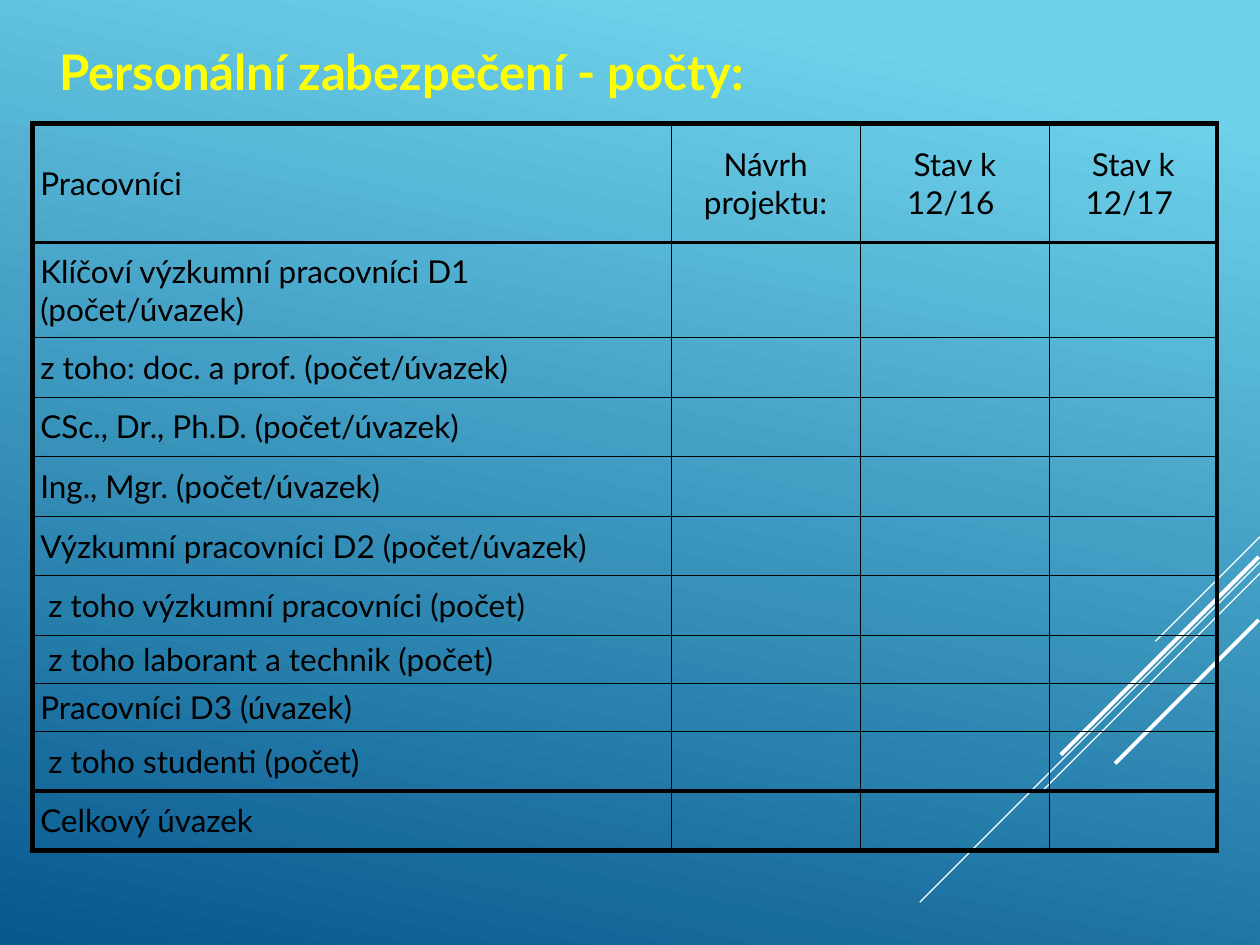
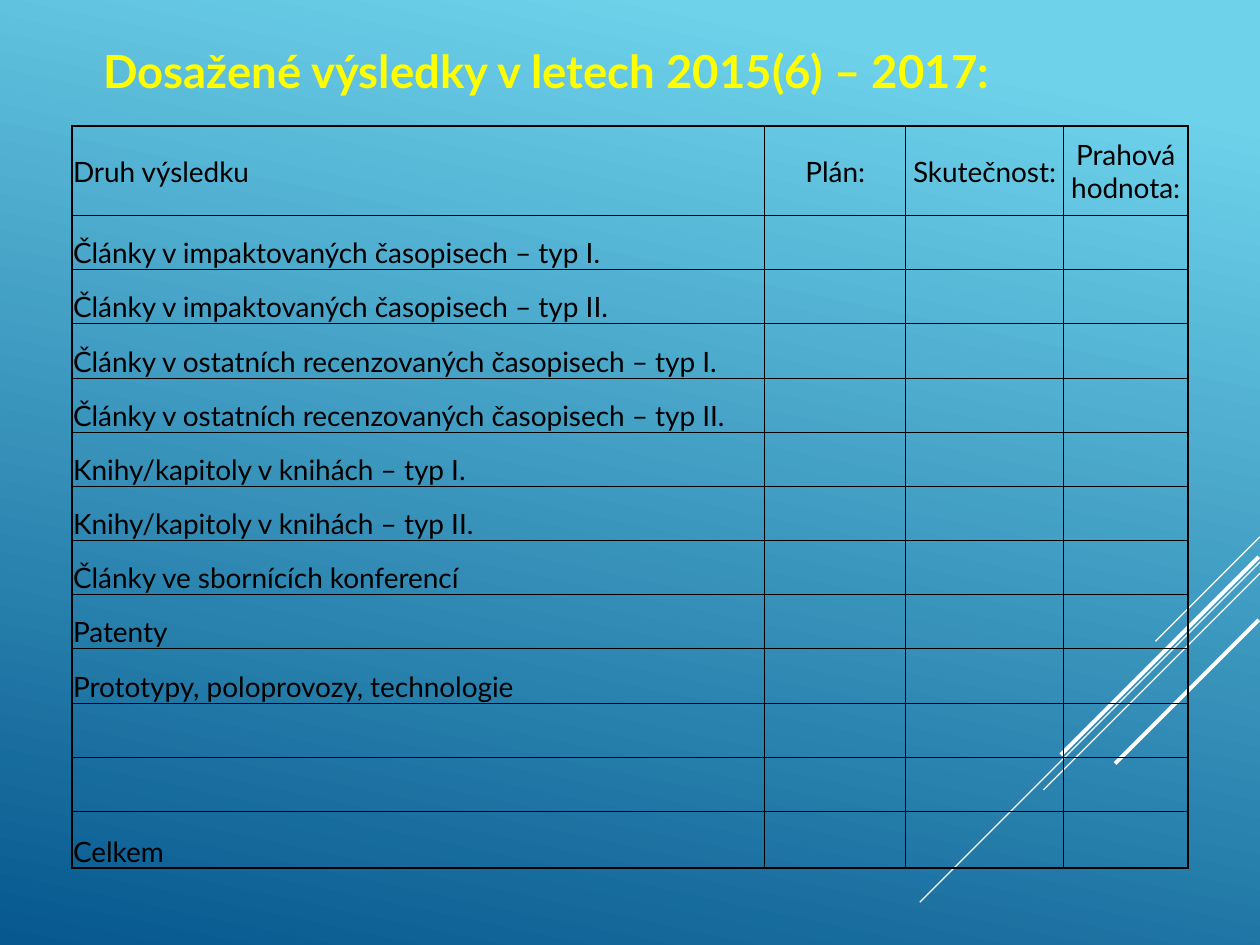
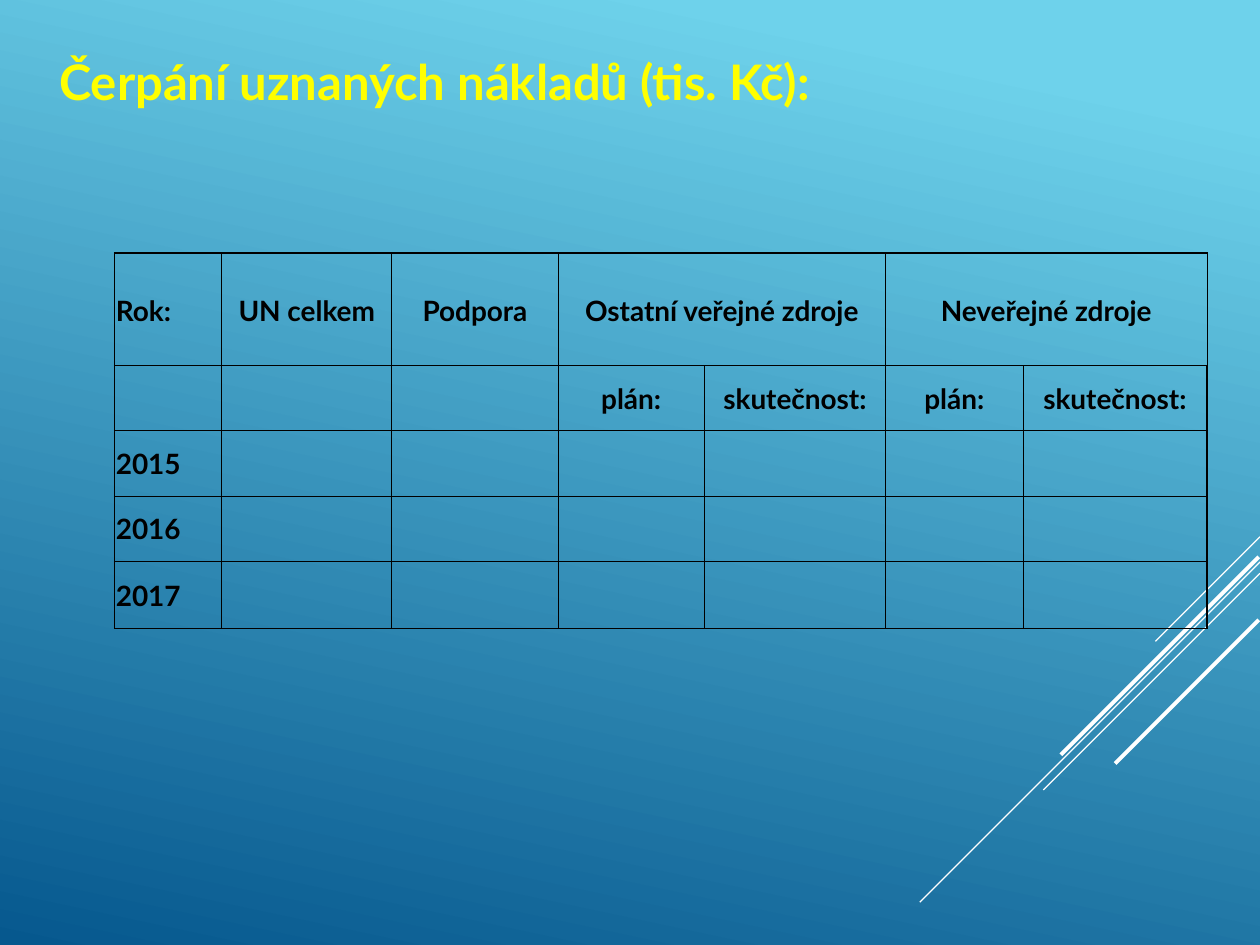
from lxml import etree
from pptx import Presentation
from pptx import util as u
from pptx.dml.color import RGBColor
from pptx.enum import shapes, text
from pptx.oxml import ns

FONT = "Lato"
YELLOW = RGBColor(0xFF, 0xFF, 0x00)
BLACK = RGBColor(0x00, 0x00, 0x00)
WHITE = RGBColor(0xFF, 0xFF, 0xFF)
SKY = RGBColor(0x6E, 0xD2, 0xEB)
DEEP_BLUE = RGBColor(0x06, 0x58, 0x8E)

GRID_COLUMNS, GRID_ROWS = 100, 75
THIN = 0.5

# start column, start row, length on both axes, width in points
STRIPES = [
    (100, 42.6, 8.3, 0.75),
    (100, 44.6, 27, 0.75),
    (100, 45.5, 17.2, 0.75),
    (99.9, 44.2, 15.7, 2.25),
    (99.9, 49.2, 11.4, 2.25),
]


def grid(*steps):
    """Turn grid steps into lengths; a step is the same across and down."""
    return [u.Inches(step / 10) for step in steps]


def write(frame, content, size, color=BLACK, bold=False,
          align=text.PP_ALIGN.LEFT):
    paragraph = frame.paragraphs[0]
    paragraph.alignment = align
    run = paragraph.add_run()
    run.text = content
    run.font.name = FONT
    run.font.size = u.Pt(size)
    run.font.bold = bold
    run.font.color.rgb = color
    return paragraph


def paint_background(master):
    fill = master.background.fill
    fill.gradient()
    fill.gradient_angle = 360 - 102
    for stop, position, color in zip(fill.gradient_stops, (0.1, 1), (SKY, DEEP_BLUE)):
        stop.position = position
        stop.color.rgb = color


def add_stripes(slide):
    for column, row, length, width in STRIPES:
        ends = grid(column, row, column - length, row + length)
        stripe = slide.shapes.add_connector(shapes.MSO_CONNECTOR.STRAIGHT, *ends)
        stripe.line.color.rgb = WHITE
        stripe.line.width = u.Pt(width)
        etree.SubElement(stripe._element.spPr, ns.qn("a:effectLst"))


def add_title(slide, content, box, size):
    frame = slide.shapes.add_textbox(*grid(*box)).text_frame
    frame.word_wrap = True
    frame.auto_size = text.MSO_AUTO_SIZE.SHAPE_TO_FIT_TEXT
    paragraph = write(frame, content, size, color=YELLOW, bold=True)
    paragraph.line_spacing = 1.1
    paragraph.space_before = paragraph.space_after = u.Pt(3)


def set_borders(cell, left, right, top, bottom):
    """Draw the four sides of a cell, with widths in points."""
    properties = cell._tc.get_or_add_tcPr()
    sides = zip(("lnL", "lnR", "lnT", "lnB"), (left, right, top, bottom))
    for index, (tag, width) in enumerate(sides):
        line = etree.Element(ns.qn(f"a:{tag}"), w=str(u.Pt(width)))
        fill = etree.SubElement(line, ns.qn("a:solidFill"))
        etree.SubElement(fill, ns.qn("a:srgbClr"), val=str(BLACK))
        properties.insert(index, line)


def share(parts, total, weights):
    for part, weight in zip(parts, weights):
        yield part, round(total * weight / sum(weights))


def add_grid_table(slide, box, columns, rows, lines, size, bold=False,
                   body_anchor=text.MSO_ANCHOR.MIDDLE, margins=(0.01, 0.01, 0.01, 0),
                   outer=1, rules=None, spans=()):
    """Columns and rows are weights; rules maps a row to the width of its top line."""
    left, top, width, height = grid(*box)
    table = slide.shapes.add_table(len(rows), len(columns), left, top, width, height).table
    table.first_row = table.horz_banding = False
    for column, length in share(table.columns, width, columns):
        column.width = length
    for row, length in share(table.rows, height, rows):
        row.height = length

    across = [outer] + [THIN] * (len(columns) - 1) + [outer]
    down = [outer] + [THIN] * (len(rows) - 1) + [outer]
    for row, rule in (rules or {}).items():
        down[row] = rule

    for row in range(len(rows)):
        for column in range(len(columns)):
            cell = table.cell(row, column)
            cell.fill.background()
            set_borders(cell, across[column], across[column + 1], down[row], down[row + 1])
            (cell.margin_left, cell.margin_top,
             cell.margin_right, cell.margin_bottom) = map(u.Inches, margins)
            cell.vertical_anchor = body_anchor if row else text.MSO_ANCHOR.MIDDLE
            content = lines[row][column] if column < len(lines[row]) else ""
            if content:
                align = text.PP_ALIGN.CENTER if column else text.PP_ALIGN.LEFT
                write(cell.text_frame, content, size, bold=bold, align=align)
    for row, first, last in spans:
        table.cell(row, first).merge(table.cell(row, last))


def build_staff(slide):
    add_title(slide, "Personální zabezpečení - počty:", (3.7, 2.3, 92.5, 6.2), 28)
    lines = [
        ["Pracovníci", "Návrh projektu:", "Stav k 12/16 ", "Stav k 12/17 "],
        ["Klíčoví výzkumní pracovníci D1 (počet/úvazek)"],
        ["z toho: doc. a prof. (počet/úvazek)"],
        ["CSc., Dr., Ph.D. (počet/úvazek)"],
        ["Ing., Mgr. (počet/úvazek)"],
        ["Výzkumní pracovníci D2 (počet/úvazek)"],
        [" z toho výzkumní pracovníci (počet)"],
        [" z toho laborant a technik (počet)"],
        ["Pracovníci D3 (úvazek)"],
        [" z toho studenti (počet)"],
        ["Celkový úvazek"],
    ]
    add_grid_table(slide, (2.6, 9.8, 94, 57.7), (5.06, 1.5, 1.5, 1.33),
                   [0.94, 0.75] + [0.47] * 5 + [0.38] * 2 + [0.47] * 2, lines, 18,
                   margins=(0.06, 0.04, 0.06, 0.04), outer=3, rules={1: 2.25, 10: 3})


def build_results(slide):
    add_title(slide, "Dosažené výsledky v letech 2015(6) – 2017:", (7.2, 2.5, 82.9, 5.8), 26)
    lines = [
        ["Druh výsledku", "Plán:", "Skutečnost:", "Prahová hodnota:"],
        ["Články v impaktovaných časopisech – typ I."],
        ["Články v impaktovaných časopisech – typ II."],
        ["Články v ostatních recenzovaných časopisech – typ I."],
        ["Články v ostatních recenzovaných časopisech – typ II."],
        ["Knihy/kapitoly v knihách – typ I."],
        ["Knihy/kapitoly v knihách – typ II."],
        ["Články ve sbornících konferencí"],
        ["Patenty"],
        ["Prototypy, poloprovozy, technologie"],
        [],
        [],
        ["Celkem"],
    ]
    add_grid_table(slide, (5.7, 10, 88.6, 58.9), (5.5, 1.12, 1.25, 0.99),
                   [0.71] + [0.43] * 11 + [0.45], lines, 16,
                   body_anchor=text.MSO_ANCHOR.BOTTOM)


def build_costs(slide):
    add_title(slide, "Čerpání uznaných nákladů (tis. Kč):", (3.7, 3.1, 92.5, 6.2), 28)
    lines = [
        ["Rok:", "UN celkem", "Podpora", "Ostatní veřejné zdroje", "", "Neveřejné zdroje"],
        ["", "", ""] + ["plán:", "skutečnost:"] * 2,
        ["2015"],
        ["2016"],
        ["2017"],
    ]
    add_grid_table(slide, (9.1, 20.1, 86.7, 29.8),
                   (0.85, 1.35, 1.32, 1.16, 1.44, 1.09, 1.46),
                   (0.9, 0.52, 0.52, 0.52, 0.54), lines, 16, bold=True,
                   spans=[(0, 3, 4), (0, 5, 6)])


def main():
    presentation = Presentation()
    presentation.slide_width, presentation.slide_height = grid(GRID_COLUMNS, GRID_ROWS)
    paint_background(presentation.slide_master)
    for build in (build_staff, build_results, build_costs):
        slide = presentation.slides.add_slide(presentation.slide_layouts[6])
        add_stripes(slide)
        build(slide)
    presentation.save("out.pptx")


if __name__ == "__main__":
    main()
